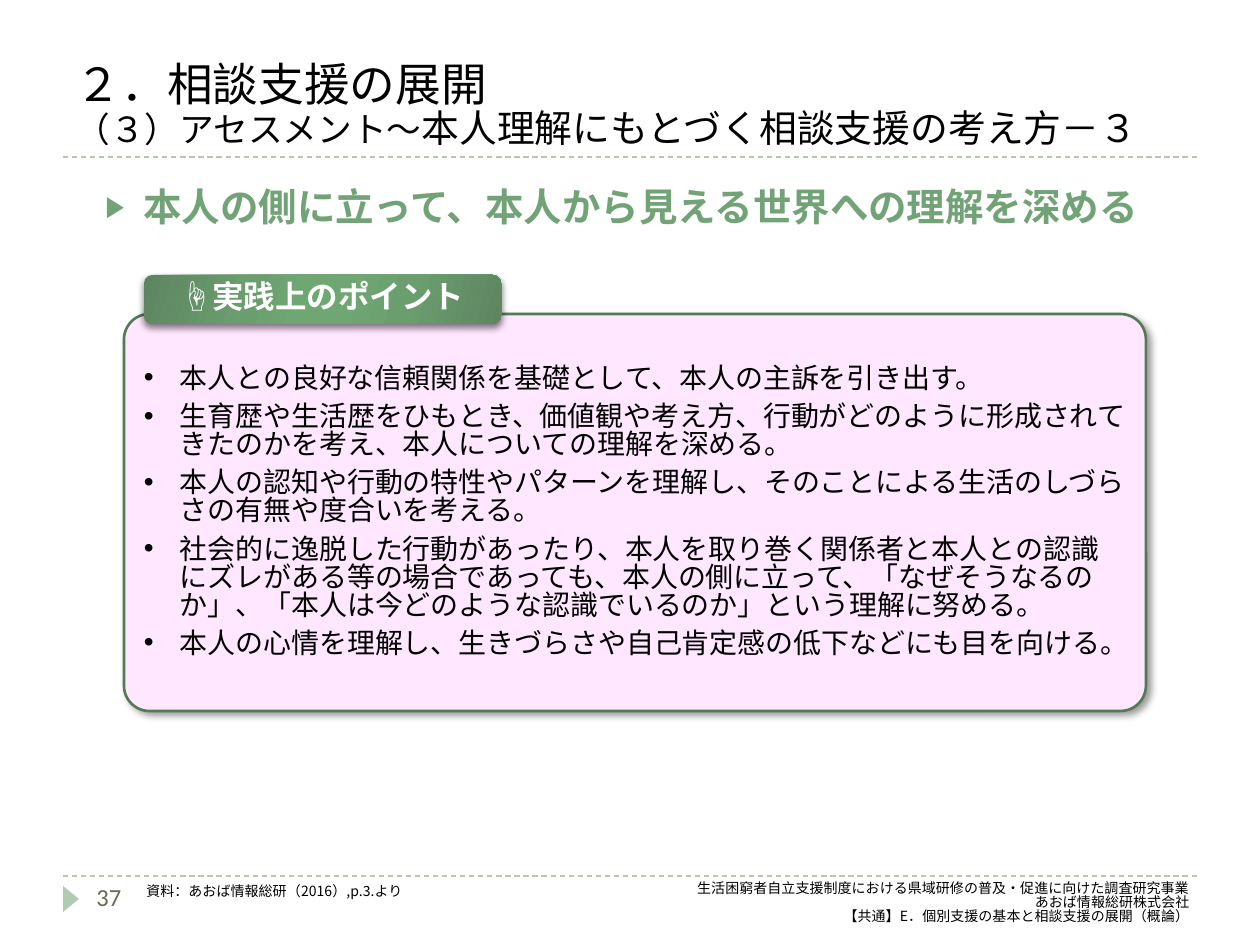
from lxml.etree import SubElement
from pptx import Presentation
from pptx.dml.color import RGBColor
from pptx.enum.dml import MSO_LINE
from pptx.enum.shapes import MSO_CONNECTOR, MSO_SHAPE
from pptx.enum.text import MSO_ANCHOR, PP_ALIGN
from pptx.oxml import parse_xml
from pptx.oxml.ns import nsdecls, qn
from pptx.util import Pt

JAPANESE, LATIN = "Noto Sans CJK JP", "Calibri"
BLACK, WHITE, GREEN, PALE_GREEN = "000000", "FFFFFF", "72A376", "B0CCB0"
TITLE = [
    [("２．相談支援の展開", 26.1)],
    [("（３）アセスメント～", 19.8), ("本人理解にもとづく相談支援の考え方－３", 21.6)],
]
HEADING = "本人の側に立って、本人から見える世界への理解を深める"
BADGE = "☝実践上のポイント"
POINTS = [
    "本人との良好な信頼関係を基礎として、本人の主訴を引き出す。",
    "生育歴や生活歴をひもとき、価値観や考え方、行動がどのように形成されてきたのかを考え、本人についての理解を深める。",
    "本人の認知や行動の特性やパターンを理解し、そのことによる生活のしづらさの有無や度合いを考える。",
    "社会的に逸脱した行動があったり、本人を取り巻く関係者と本人との認識にズレがある等の場合であっても、"
    "本人の側に立って、「なぜそうなるのか」、「本人は今どのような認識でいるのか」という理解に努める。",
    "本人の心情を理解し、生きづらさや自己肯定感の低下などにも目を向ける。",
]
SOURCE = "資料：あおば情報総研（2016）,p.3.より"
CREDITS = [
    "生活困窮者自立支援制度における県域研修の普及・促進に向けた調査研究事業",
    "あおば情報総研株式会社",
    "【共通】E．個別支援の基本と相談支援の展開（概論）",
]
PAGE_NUMBER = "37"
BADGE_STOPS = [(0, "5D8561"), (30, "6B9E6F"), (45, "6EA772"),
               (55, "6EA772"), (73, "6B9E6F"), (100, "5D8561")]
RULE_LEVELS = [157, 876]


def px(value):
    return round(value * 914400 / 126)


def color(value):
    return RGBColor.from_string(value)


def box(*values):
    return [px(value) for value in values]


def style(paragraph, size, ink, bold=False, font=JAPANESE, spacing=0.83):
    paragraph.line_spacing = spacing
    paragraph.font.size = Pt(size)
    paragraph.font.bold = bold
    paragraph.font.color.rgb = color(ink)
    paragraph.font.name = font
    SubElement(paragraph.font._rPr, qn("a:ea"), typeface=font)


def add_bullet(paragraph, character, indent, ink, percent=100):
    properties = paragraph._p.get_or_add_pPr()
    properties.set("marL", str(px(indent)))
    properties.set("indent", str(-px(indent)))
    defaults = properties.find(qn("a:defRPr"))
    for item in (
        f'<a:buClr {nsdecls("a")}><a:srgbClr val="{ink}"/></a:buClr>',
        f'<a:buSzPct {nsdecls("a")} val="{percent * 1000}"/>',
        f'<a:buFont {nsdecls("a")} typeface="Arial"/>',
        f'<a:buChar {nsdecls("a")} char="{character}"/>',
    ):
        defaults.addprevious(parse_xml(item))


def write(shape, lines, size, ink, align=PP_ALIGN.LEFT, **options):
    frame = shape.text_frame
    frame.word_wrap = True
    frame.text = "\n".join(lines)
    for paragraph in frame.paragraphs:
        paragraph.alignment = align
        style(paragraph, size, ink, **options)
    return frame


def add_text(slide, place, *content, **options):
    return write(slide.shapes.add_textbox(*box(*place)), *content, **options)


def add_shape(slide, kind, place, fill=None):
    shape = slide.shapes.add_shape(kind, *box(*place))
    shape.shadow.inherit = False
    shape.line.fill.background()
    if fill:
        shape.fill.solid()
        shape.fill.fore_color.rgb = color(fill)
    return shape


def add_shadow(shape, opacity, blur, distance, angle):
    effects = shape._element.spPr.find(qn("a:effectLst"))
    effects.append(parse_xml(
        f'<a:outerShdw {nsdecls("a")} blurRad="{Pt(blur)}" dist="{Pt(distance)}" '
        f'dir="{angle * 60000}" algn="ctr" rotWithShape="0"><a:srgbClr val="{BLACK}">'
        f'<a:alpha val="{opacity * 1000}"/></a:srgbClr></a:outerShdw>'))


def add_gradient(shape, stops, angle):
    marks = "".join(f'<a:gs pos="{position * 1000}"><a:srgbClr val="{ink}"/></a:gs>'
                    for position, ink in stops)
    shape._element.spPr.find(qn("a:prstGeom")).addnext(parse_xml(
        f'<a:gradFill {nsdecls("a")} rotWithShape="1"><a:gsLst>{marks}</a:gsLst>'
        f'<a:lin ang="{angle * 60000}" scaled="0"/></a:gradFill>'))


def add_rule(slide, level):
    rule = slide.shapes.add_connector(MSO_CONNECTOR.STRAIGHT, *box(63, level, 1197, level))
    rule.line.color.rgb = color(PALE_GREEN)
    rule.line.width = Pt(0.75)
    rule.line.dash_style = MSO_LINE.DASH
    SubElement(rule._element.spPr, qn("a:effectLst"))


def fill_title(title):
    title.left, title.top, title.width, title.height = box(63, 21, 1197, 136)
    frame = title.text_frame
    frame.word_wrap = True
    frame.vertical_anchor = MSO_ANCHOR.BOTTOM
    paragraph = frame.paragraphs[0]
    paragraph.alignment = PP_ALIGN.LEFT
    style(paragraph, 21.6, BLACK, spacing=0.88)
    for index, line in enumerate(TITLE):
        if index:
            paragraph.add_line_break()
        for text, size in line:
            run = paragraph.add_run()
            run.text = text
            run.font.size = Pt(size)


def main():
    """Build the slide on assessment and save it."""
    presentation = Presentation()
    presentation.slide_width, presentation.slide_height = px(1260), px(945)
    slide = presentation.slides.add_slide(presentation.slide_layouts[5])
    fill_title(slide.shapes.title)
    for level in RULE_LEVELS:
        add_rule(slide, level)
    marker = add_shape(slide, MSO_SHAPE.ISOSCELES_TRIANGLE, (58, 891, 26, 16), PALE_GREEN)
    marker.rotation = 90

    panel = add_shape(slide, MSO_SHAPE.ROUNDED_RECTANGLE, (124, 314, 1022, 397), "FFE7FF")
    panel.adjustments[0] = 0.064
    panel.line.color.rgb = color("547957")
    panel.line.width = Pt(1.5)
    add_shadow(panel, 40, 4, 3, 45)
    frame = write(panel, POINTS, 16, BLACK)
    frame.vertical_anchor = MSO_ANCHOR.MIDDLE
    for paragraph in frame.paragraphs:
        paragraph.space_after = Pt(6)
        add_bullet(paragraph, "•", 36, BLACK)

    heading = add_text(slide, (93, 185, 1123, 100), [HEADING], 22, GREEN, bold=True)
    heading.paragraphs[0].space_before = Pt(6)
    add_bullet(heading.paragraphs[0], "▶", 38, GREEN, 76)

    add_text(slide, (84, 876, 73, 50), [PAGE_NUMBER], 14, "676A55", font=LATIN, spacing=1)
    add_text(slide, (134, 879, 704, 63), [SOURCE], 8, BLACK)
    add_text(slide, (315, 876, 887, 69), CREDITS, 8, BLACK, align=PP_ALIGN.RIGHT)

    badge = add_shape(slide, MSO_SHAPE.ROUNDED_RECTANGLE, (144, 275, 357, 49))
    add_gradient(badge, BADGE_STOPS, 16)
    add_shadow(badge, 50, 4, 2, 90)
    frame = write(badge, [BADGE], 18, WHITE, align=PP_ALIGN.CENTER, bold=True)
    frame.vertical_anchor = MSO_ANCHOR.MIDDLE
    presentation.save("out.pptx")


if __name__ == "__main__":
    main()
